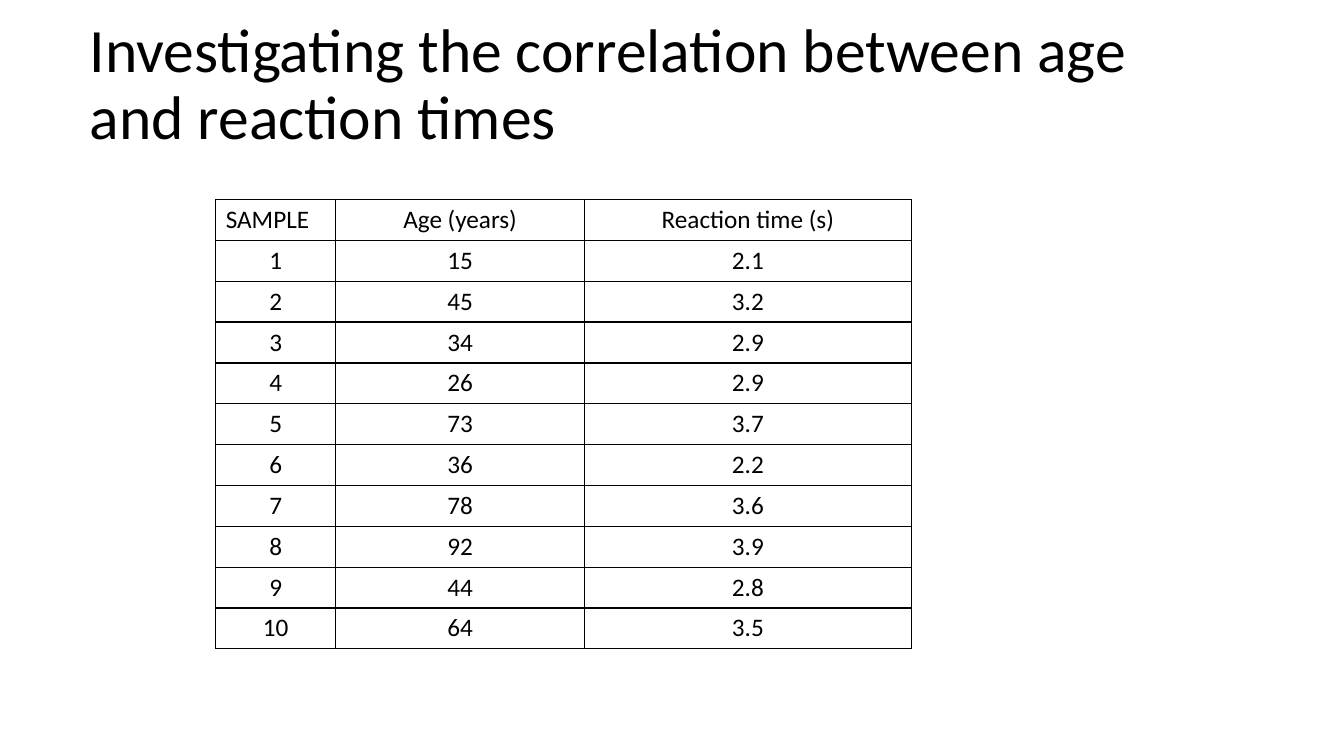
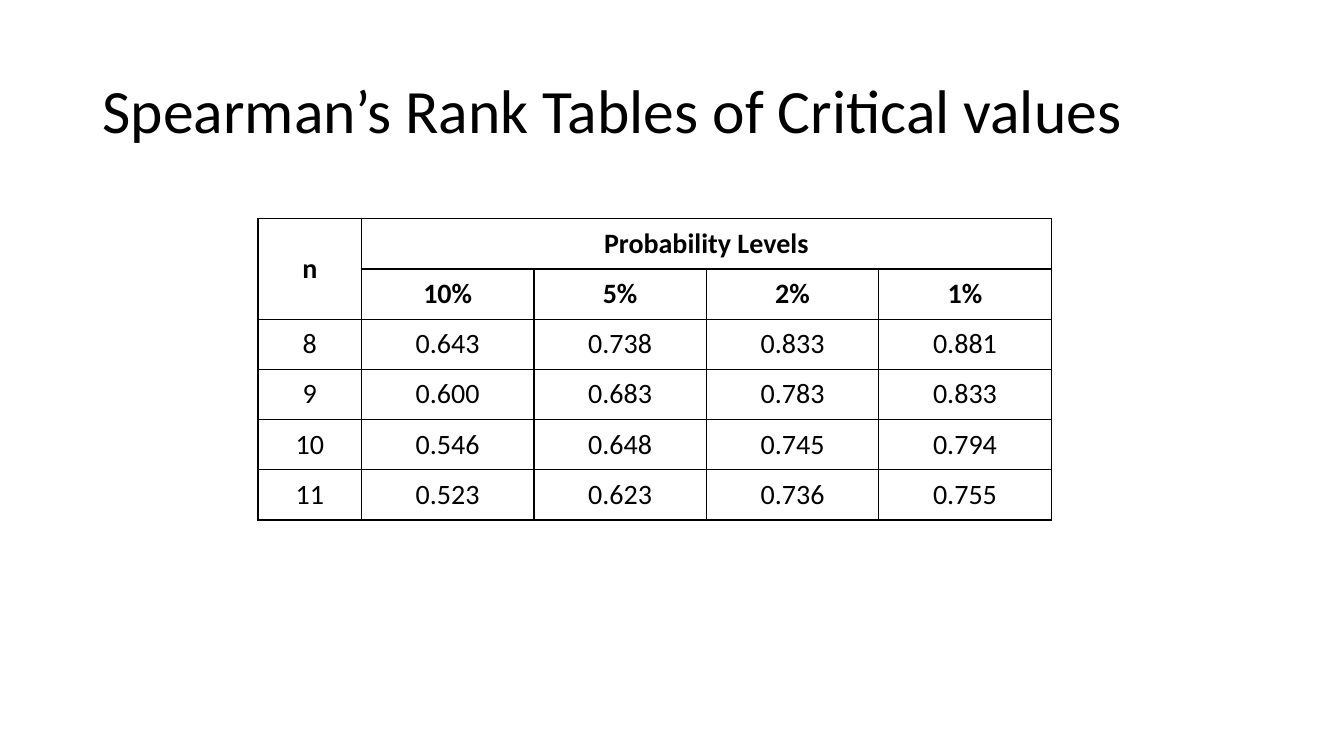
from lxml import etree
from pptx import Presentation
from pptx.dml.color import RGBColor
from pptx.enum.text import MSO_ANCHOR, PP_ALIGN
from pptx.oxml.ns import qn
from pptx.util import Inches, Pt

LEFT, CENTER = PP_ALIGN.LEFT, PP_ALIGN.CENTER
TOP, MIDDLE = MSO_ANCHOR.TOP, MSO_ANCHOR.MIDDLE

# Shared style
FONT = "Calibri"
BLACK = RGBColor(0x00, 0x00, 0x00)
TITLE_SIZE = 44
TITLE_WIDTH, TITLE_HEIGHT = 86.25, 19.33  # percent of the slide
BORDER_WIDTH = Pt(1)

# Content: places are left, top, width, height in percent of the slide
REACTION_TIMES = [
    ("15", "2.1"), ("45", "3.2"), ("34", "2.9"), ("26", "2.9"), ("73", "3.7"),
    ("36", "2.2"), ("78", "3.6"), ("92", "3.9"), ("44", "2.8"), ("64", "3.5"),
]
SLIDES = [
    {
        "title": "Investigating the correlation between age and reaction times",
        "title_at": (5.93, 1.73),
        "table_at": (16.05, 26.4, 51.75, 59.47),
        "column_shares": (1.19, 2.47, 3.24),
        "size": 18,
        "bold_rows": 0,
        "merges": [],
        "rows": [("SAMPLE", "Age (years)", "Reaction time (s)")]
        + [(str(n), *pair) for n, pair in enumerate(REACTION_TIMES, 1)],
    },
    {
        "title": "Spearman’s Rank Tables of Critical values",
        "title_at": (6.9, 5.33),
        "table_at": (19.2, 28.93, 59.02, 39.87),
        "column_shares": (3, 5, 5, 5, 5),
        "size": 20,
        "bold_rows": 2,
        "merges": [((0, 0), (1, 0)), ((0, 1), (0, 4))],
        "rows": [
            ("n", "Probability Levels", "", "", ""),
            ("", "10%", "5%", "2%", "1%"),
            ("8", "0.643", "0.738", "0.833", "0.881"),
            ("9", "0.600", "0.683", "0.783", "0.833"),
            ("10", "0.546", "0.648", "0.745", "0.794"),
            ("11", "0.523", "0.623", "0.736", "0.755"),
        ],
    },
]


def style_text(frame, size, align, bold=False):
    for para in frame.paragraphs:
        para.alignment = align
        for span in para.runs:
            span.font.name = FONT
            span.font.size = Pt(size)
            span.font.bold = bold
            span.font.color.rgb = BLACK


def add_borders(cell):
    properties = cell._tc.get_or_add_tcPr()
    for side in ("a:lnL", "a:lnR", "a:lnT", "a:lnB"):
        line = etree.SubElement(properties, qn(side), w=str(BORDER_WIDTH))
        fill = etree.SubElement(line, qn("a:solidFill"))
        etree.SubElement(fill, qn("a:srgbClr"), val=str(BLACK))


deck = Presentation()
deck.slide_width, deck.slide_height = Inches(13.33), Inches(7.5)
column, row = deck.slide_width / 100, deck.slide_height / 100

for content in SLIDES:
    page = deck.slides.add_slide(deck.slide_layouts[6])

    # Title
    left, top = content["title_at"]
    box = page.shapes.add_textbox(
        int(left * column), int(top * row),
        int(TITLE_WIDTH * column), int(TITLE_HEIGHT * row))
    frame = box.text_frame
    frame.word_wrap = True
    frame.vertical_anchor = MIDDLE
    frame.text = content["title"]
    frame.paragraphs[0].line_spacing = 0.9
    style_text(frame, TITLE_SIZE, LEFT)

    # Table grid
    rows, shares = content["rows"], content["column_shares"]
    left, top, width, height = content["table_at"]
    table = page.shapes.add_table(
        len(rows), len(shares), int(left * column), int(top * row),
        int(width * column), int(height * row)).table
    table.first_row = table.horz_banding = False
    for table_column, share in zip(table.columns, shares):
        table_column.width = int(width * column * share / sum(shares))
    for start, end in content["merges"]:
        table.cell(*start).merge(table.cell(*end))

    # Table cells
    for r, values in enumerate(rows):
        for c, value in enumerate(values):
            cell = table.cell(r, c)
            add_borders(cell)
            cell.fill.background()
            cell.text_frame.text = value
            cell.vertical_anchor = MIDDLE
            align = LEFT if value == "SAMPLE" else CENTER
            style_text(cell.text_frame, content["size"], align,
                       r < content["bold_rows"])
            if value == "SAMPLE":
                cell.vertical_anchor = TOP

deck.save("out.pptx")
